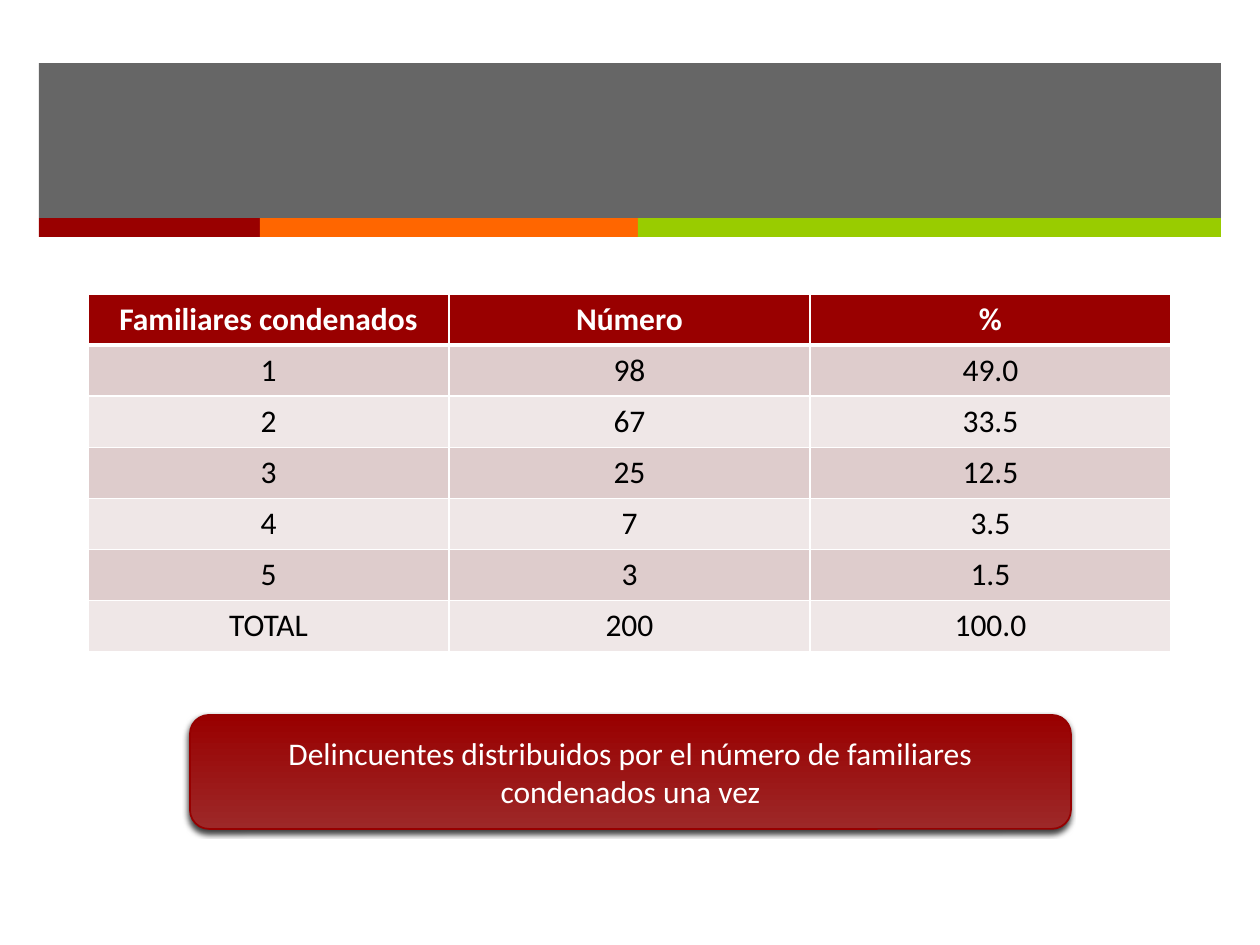
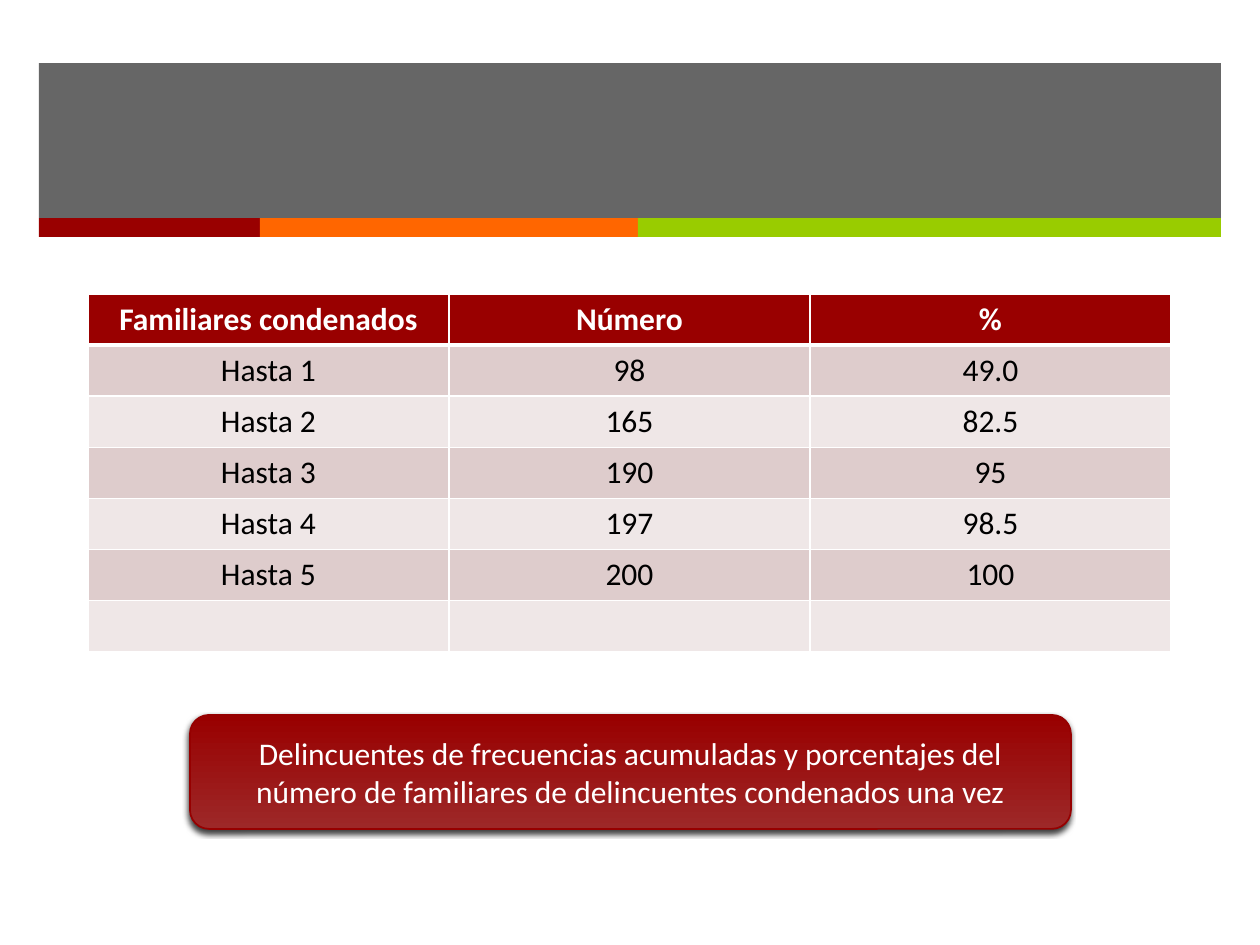
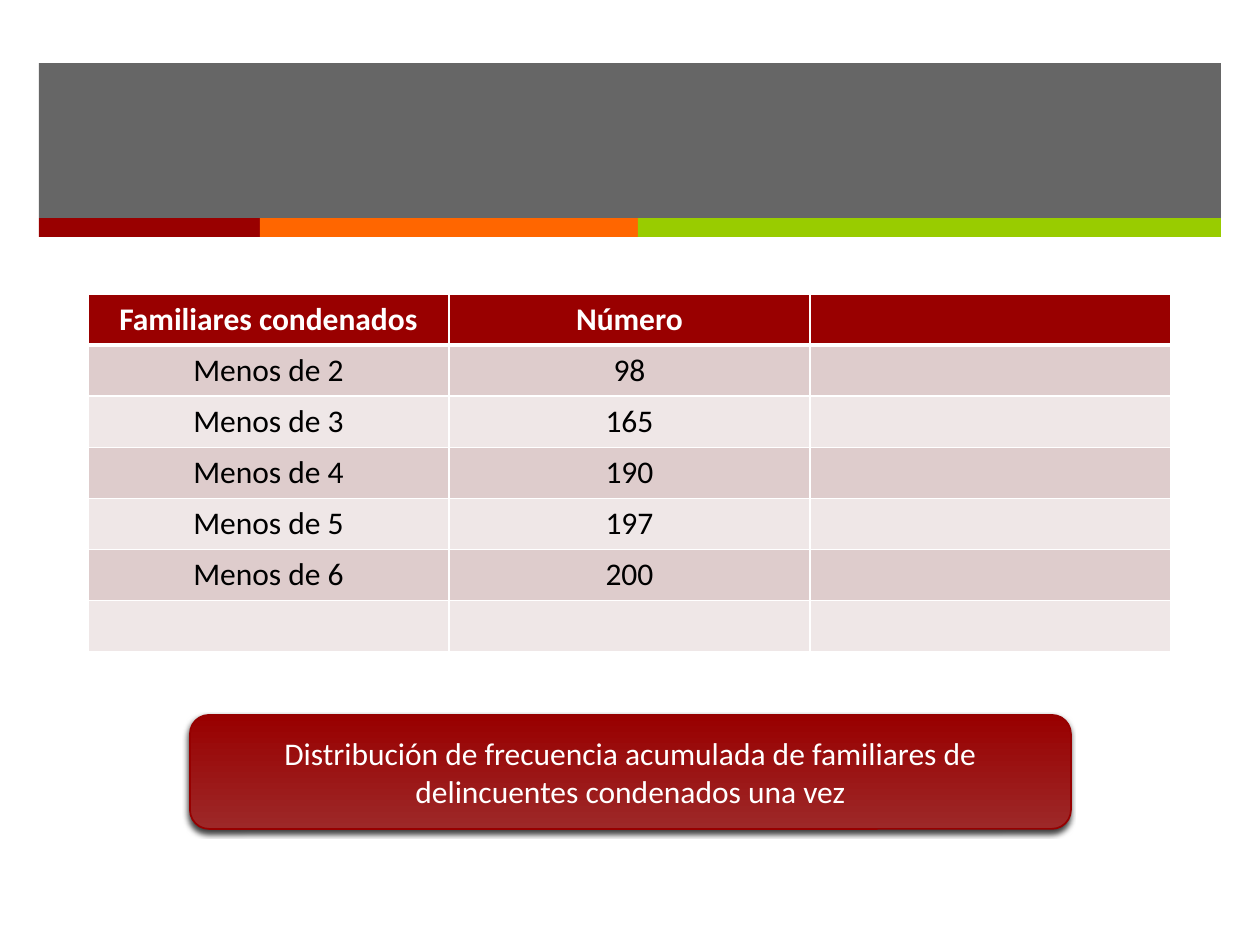
"""Three slides of frequency tables on relatives convicted, each with a caption."""
from lxml.etree import SubElement
from pptx import Presentation
from pptx.dml.color import RGBColor
from pptx.enum.shapes import MSO_SHAPE as SHAPE
from pptx.enum.text import MSO_ANCHOR as ANCHOR, PP_ALIGN as ALIGN
from pptx.oxml.ns import qn
from pptx.util import Pt

HEADER = ("Familiares condenados", "Número", "%")
SLIDES = [
    {"rows": [HEADER,
              ("1", "98", "49.0"),
              ("2", "67", "33.5"),
              ("3", "25", "12.5"),
              ("4", "7", "3.5"),
              ("5", "3", "1.5"),
              ("TOTAL", "200", "100.0")],
     "caption": "Delincuentes distribuidos por el número de familiares condenados una vez"},
    {"rows": [HEADER,
              ("Hasta 1", "98", "49.0"),
              ("Hasta 2", "165", "82.5"),
              ("Hasta 3", "190", "95"),
              ("Hasta 4", "197", "98.5"),
              ("Hasta 5", "200", "100"),
              ("", "", "")],
     "caption": "Delincuentes de frecuencias acumuladas y porcentajes del número "
                "de familiares de delincuentes condenados una vez"},
    {"rows": [(*HEADER[:2], ""),
              ("Menos de 2", "98", ""),
              ("Menos de 3", "165", ""),
              ("Menos de 4", "190", ""),
              ("Menos de 5", "197", ""),
              ("Menos de 6", "200", ""),
              ("", "", "")],
     "caption": "Distribución de frecuencia acumulada de familiares de "
                "delincuentes condenados una vez"},
]

COLORS = {"band": "262626", "red": "990000", "orange": "FF6600", "green": "99CC00",
          "odd": "DECCCC", "even": "EFE7E7", "glow": "9D2828", "edge": "960000",
          "white": "FFFFFF", "black": "000000"}
FONT, TEXT_PT = "Calibri", 18
SLIDE_W, SLIDE_H = 1260, 945
BAND = (39, 63, 1182, 155)
STRIPES = [("red", 221), ("orange", 378), ("green", 583)]
STRIPE_H = 19
TABLE_X, TABLE_Y, COL_W, ROW_H = 88, 294, 361, 51
CAPTION = (190, 715, 881, 114)
CAPTION_MARGIN = 24


def px(n):
    return round(n * 914400 / 126)


def rgb(name):
    return RGBColor.from_string(COLORS[name])


def add_box(s, kind, box, color):
    sp = s.shapes.add_shape(kind, *map(px, box))
    sp.shadow.inherit = False
    sp.fill.solid()
    sp.fill.fore_color.rgb = rgb(color)
    sp.line.fill.background()
    return sp


def add_text(tf, text, color, bold=False):
    p = tf.paragraphs[0]
    p.alignment = ALIGN.CENTER
    p.font.size = Pt(TEXT_PT)
    if text:
        r = p.add_run()
        r.text = text
        r.font.name, r.font.size, r.font.bold = FONT, Pt(TEXT_PT), bold
        r.font.color.rgb = rgb(color)


def add_header(s):
    band = add_box(s, SHAPE.RECTANGLE, BAND, "band")
    clr = next(band.fill._xPr.iter(qn("a:srgbClr")))
    SubElement(clr, qn("a:alpha"), val="70000")
    x, y, _, h = BAND
    for color, w in STRIPES:
        add_box(s, SHAPE.RECTANGLE, (x, y + h, w, STRIPE_H), color)
        x += w


def set_border(cell, side, width):
    ln = SubElement(cell._tc.get_or_add_tcPr(), qn(f"a:ln{side}"), w=str(Pt(width)))
    fill = SubElement(ln, qn("a:solidFill"))
    SubElement(fill, qn("a:srgbClr"), val=COLORS["white"])


def add_frequency_table(s, rows):
    n_rows, n_cols = len(rows), len(rows[0])
    box = (TABLE_X, TABLE_Y, COL_W * n_cols, ROW_H * n_rows)
    table = s.shapes.add_table(n_rows, n_cols, *map(px, box)).table
    for i, row in enumerate(rows):
        table.rows[i].height = px(ROW_H)
        for j, text in enumerate(row):
            table.columns[j].width = px(COL_W)
            cell = table.cell(i, j)
            for side in "LRTB":
                thick = (i, side) in ((0, "B"), (1, "T"))
                set_border(cell, side, 3 if thick else 1)
            cell.fill.solid()
            cell.fill.fore_color.rgb = rgb("red" if i == 0 else "odd" if i % 2 else "even")
            add_text(cell.text_frame, text, "black" if i else "white", bold=i == 0)


def add_caption(s, text):
    sp = add_box(s, SHAPE.ROUNDED_RECTANGLE, CAPTION, "red")
    sp.fill.gradient()
    sp.fill.gradient_angle = 90
    for stop, color in zip(sp.fill.gradient_stops, ("glow", "red")):
        stop.color.rgb = rgb(color)
    sp.line.color.rgb = rgb("edge")
    sp.line.width = Pt(1)
    effects = sp._element.spPr.find(qn("a:effectLst"))
    shadow = SubElement(effects, qn("a:outerShdw"), blurRad=str(Pt(3)), dist=str(Pt(2)),
                        dir=str(110 * 60000), rotWithShape="0")
    clr = SubElement(shadow, qn("a:srgbClr"), val=COLORS["black"])
    SubElement(clr, qn("a:alpha"), val="75000")
    tf = sp.text_frame
    tf.word_wrap = True
    tf.vertical_anchor = ANCHOR.MIDDLE
    tf.margin_left = tf.margin_right = px(CAPTION_MARGIN)
    add_text(tf, text, "white")


def main():
    prs = Presentation()
    prs.slide_width, prs.slide_height = px(SLIDE_W), px(SLIDE_H)
    for content in SLIDES:
        s = prs.slides.add_slide(prs.slide_layouts[6])
        add_header(s)
        add_frequency_table(s, content["rows"])
        add_caption(s, content["caption"])
    prs.save("out.pptx")


if __name__ == "__main__":
    main()
